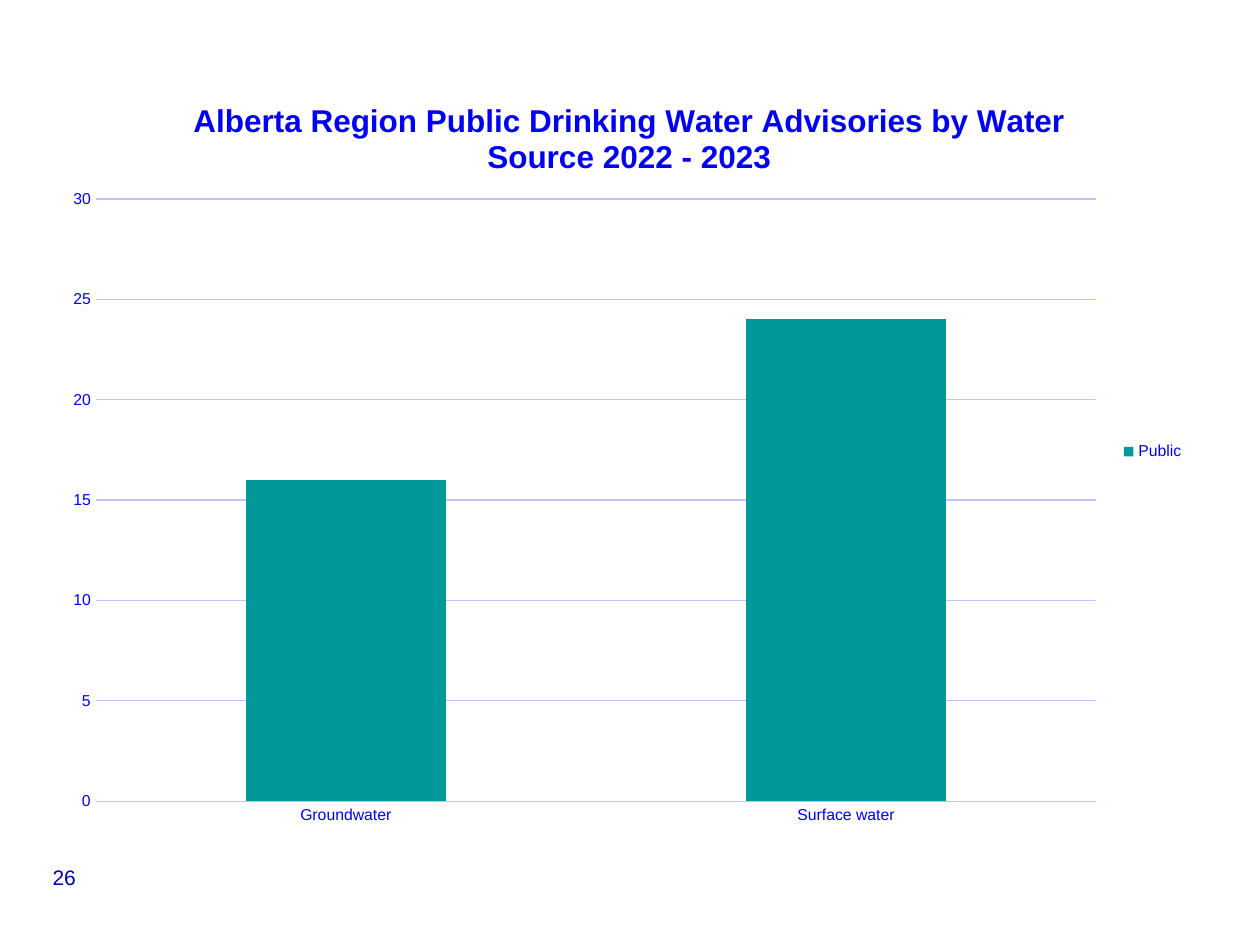
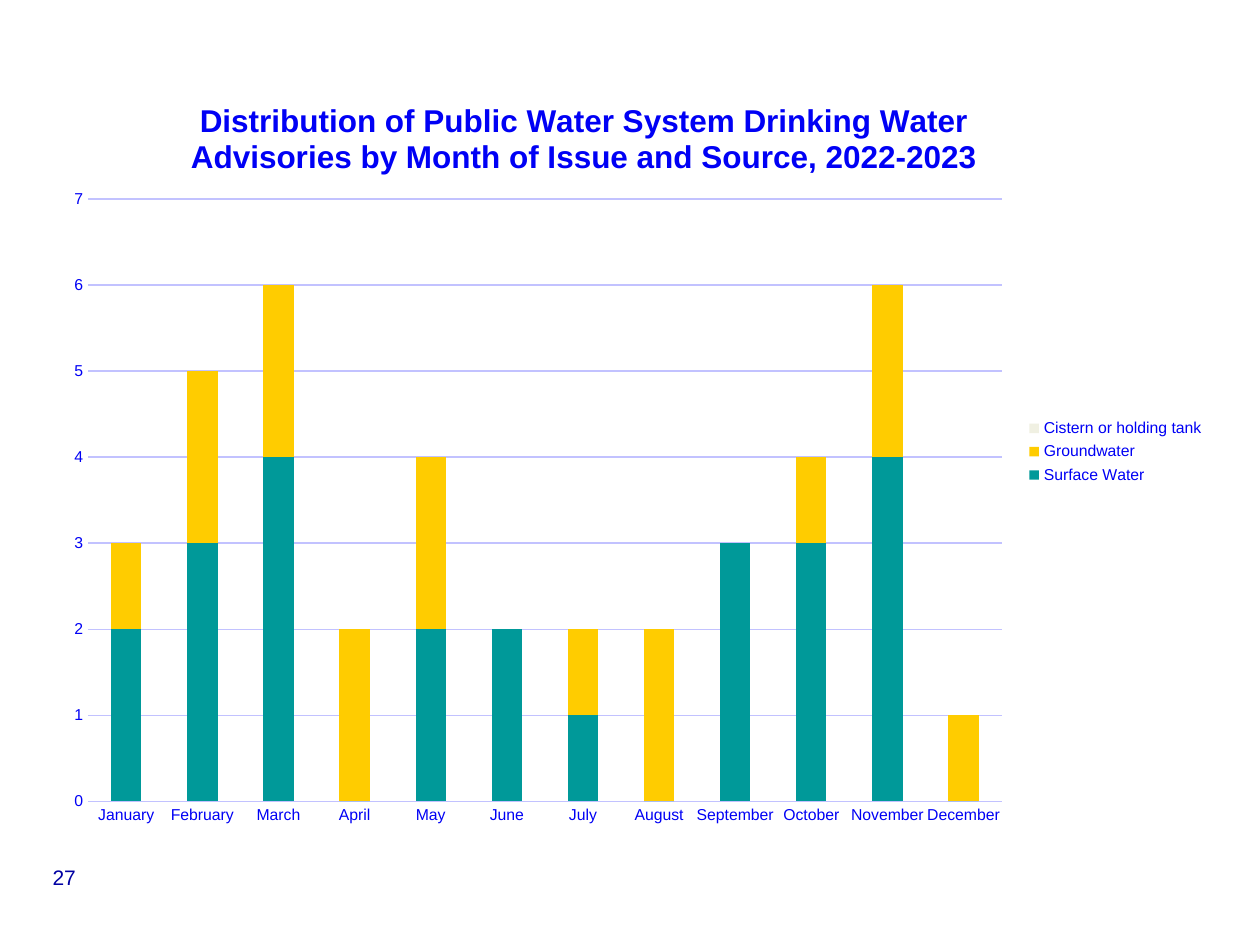
from lxml import etree
from pptx import Presentation
from pptx.chart.data import CategoryChartData
from pptx.dml.color import RGBColor
from pptx.enum.chart import XL_CHART_TYPE, XL_LEGEND_POSITION, XL_TICK_MARK
from pptx.enum.text import MSO_ANCHOR, PP_ALIGN
from pptx.oxml.ns import qn
from pptx.util import Inches, Pt

STACKED = XL_CHART_TYPE.COLUMN_STACKED
LEGEND_RIGHT = XL_LEGEND_POSITION.RIGHT
NO_TICK = XL_TICK_MARK.NONE
CENTER = PP_ALIGN.CENTER
MIDDLE = MSO_ANCHOR.MIDDLE

FONT = "Arial"
LABEL_BLUE = "0000F5"
NUMBER_BLUE = "0000A3"
GRID_BLUE = "C2C2FF"
TEAL, YELLOW, IVORY = "009999", "FFCC00", "F0F0E2"

FIRST_PAGE = 26
CHART_LEFT, CHART_TOP, CHART_HEIGHT = 0.4, 0.5, 6.17
TITLE_TOP = 0.75
PLOT_TOP, PLOT_BOTTOM = 1.58, 6.36

# Title and plot edges are inches on the slide.
CHARTS = [
    {
        "title": "Alberta Region Public Drinking Water Advisories by Water Source 2022 - 2023",
        "width": 9.1,
        "title_left": 1.49,
        "plot": (0.76, 8.7),
        "scale": (30, 5),
        "categories": ["Groundwater", "Surface water"],
        "series": [("Public", TEAL, [16, 24])],
    },
    {
        "title": "Distribution of Public Water System Drinking Water Advisories "
                 "by Month of Issue and Source, 2022-2023",
        "width": 9.26,
        "title_left": 1.47,
        "plot": (0.7, 7.95),
        "scale": (7, 1),
        "categories": ["January", "February", "March", "April", "May", "June", "July",
                       "August", "September", "October", "November", "December"],
        "series": [
            ("Surface Water", TEAL, [2, 3, 4, 0, 2, 2, 1, 0, 3, 3, 4, 0]),
            ("Groundwater", YELLOW, [1, 2, 2, 2, 2, 0, 1, 2, 0, 1, 2, 1]),
            ("Cistern or holding tank", IVORY, [0] * 12),
        ],
    },
]


def color(hex_code):
    return RGBColor.from_string(hex_code)


def style_font(font, size, hex_code, bold=False):
    font.name, font.size, font.bold = FONT, Pt(size), bold
    font.color.rgb = color(hex_code)


def style_line(line, hex_code):
    line.color.rgb = color(hex_code)
    line.width = Pt(0.75)


def set_layout(parent, index, **values):
    """Give a chart part a manual layout, as fractions of the chart."""
    for old in parent.findall(qn("c:layout")):
        parent.remove(old)
    layout = etree.Element(qn("c:layout"))
    manual = etree.SubElement(layout, qn("c:manualLayout"))
    for tag, value in values.items():
        etree.SubElement(manual, qn(f"c:{tag}")).set("val", str(value))
    parent.insert(index, layout)


def add_title(chart, spec_row):
    chart.has_title = True
    frame = chart.chart_title.text_frame
    frame.text = spec_row["title"]
    style_font(frame.paragraphs[0].runs[0].font, 18, LABEL_BLUE, bold=True)
    set_layout(chart.chart_title._element, 1, xMode="edge", yMode="edge",
               x=(spec_row["title_left"] - CHART_LEFT) / spec_row["width"],
               y=(TITLE_TOP - CHART_TOP) / CHART_HEIGHT)


def style_axes(chart, maximum, step):
    for axis in (chart.category_axis, chart.value_axis):
        axis.major_tick_mark = axis.minor_tick_mark = NO_TICK
        style_font(axis.tick_labels.font, 9, LABEL_BLUE)
    style_line(chart.category_axis.format.line, GRID_BLUE)
    values = chart.value_axis
    values.minimum_scale, values.maximum_scale, values.major_unit = 0, maximum, step
    values.format.line.fill.background()
    values.has_major_gridlines = True
    style_line(values.major_gridlines.format.line, GRID_BLUE)


def add_advisory_chart(page, row):
    data = CategoryChartData()
    data.categories = row["categories"]
    for name, _, values in row["series"]:
        data.add_series(name, values)
    chart = page.shapes.add_chart(STACKED, Inches(CHART_LEFT), Inches(CHART_TOP),
                                  Inches(row["width"]), Inches(CHART_HEIGHT), data).chart
    style_font(chart.font, 10, "000066")
    add_title(chart, row)
    style_axes(chart, *row["scale"])

    chart.has_legend = True
    chart.legend.position = LEGEND_RIGHT
    chart.legend.include_in_layout = False
    style_font(chart.legend.font, 9, LABEL_BLUE)

    bars = chart.plots[0]
    bars.gap_width, bars.overlap, bars.vary_by_categories = 150, 100, False
    for series, (_, fill, _) in zip(bars.series, row["series"]):
        series.format.fill.solid()
        series.format.fill.fore_color.rgb = color(fill)

    left, right = row["plot"]
    plot_area = chart._chartSpace.chart.plotArea
    set_layout(plot_area, 0, layoutTarget="inner", xMode="edge", yMode="edge",
               x=(left - CHART_LEFT) / row["width"],
               y=(PLOT_TOP - CHART_TOP) / CHART_HEIGHT,
               w=(right - left) / row["width"],
               h=(PLOT_BOTTOM - PLOT_TOP) / CHART_HEIGHT)


def add_page_number(page, number):
    box = page.shapes.add_textbox(Inches(0.04), Inches(6.82), Inches(0.94), Inches(0.3))
    frame = box.text_frame
    frame.word_wrap, frame.vertical_anchor = True, MIDDLE
    frame.text = str(number)
    para = frame.paragraphs[0]
    para.alignment, para.line_spacing = CENTER, 0.9
    style_font(para.runs[0].font, 12, NUMBER_BLUE)


def main():
    deck = Presentation()
    deck.slide_width, deck.slide_height = Inches(10), Inches(7.5)
    blank = deck.slide_layouts[6]
    for number, row in enumerate(CHARTS, FIRST_PAGE):
        page = deck.slides.add_slide(blank)
        add_page_number(page, number)
        add_advisory_chart(page, row)
    deck.save("out.pptx")


if __name__ == "__main__":
    main()
